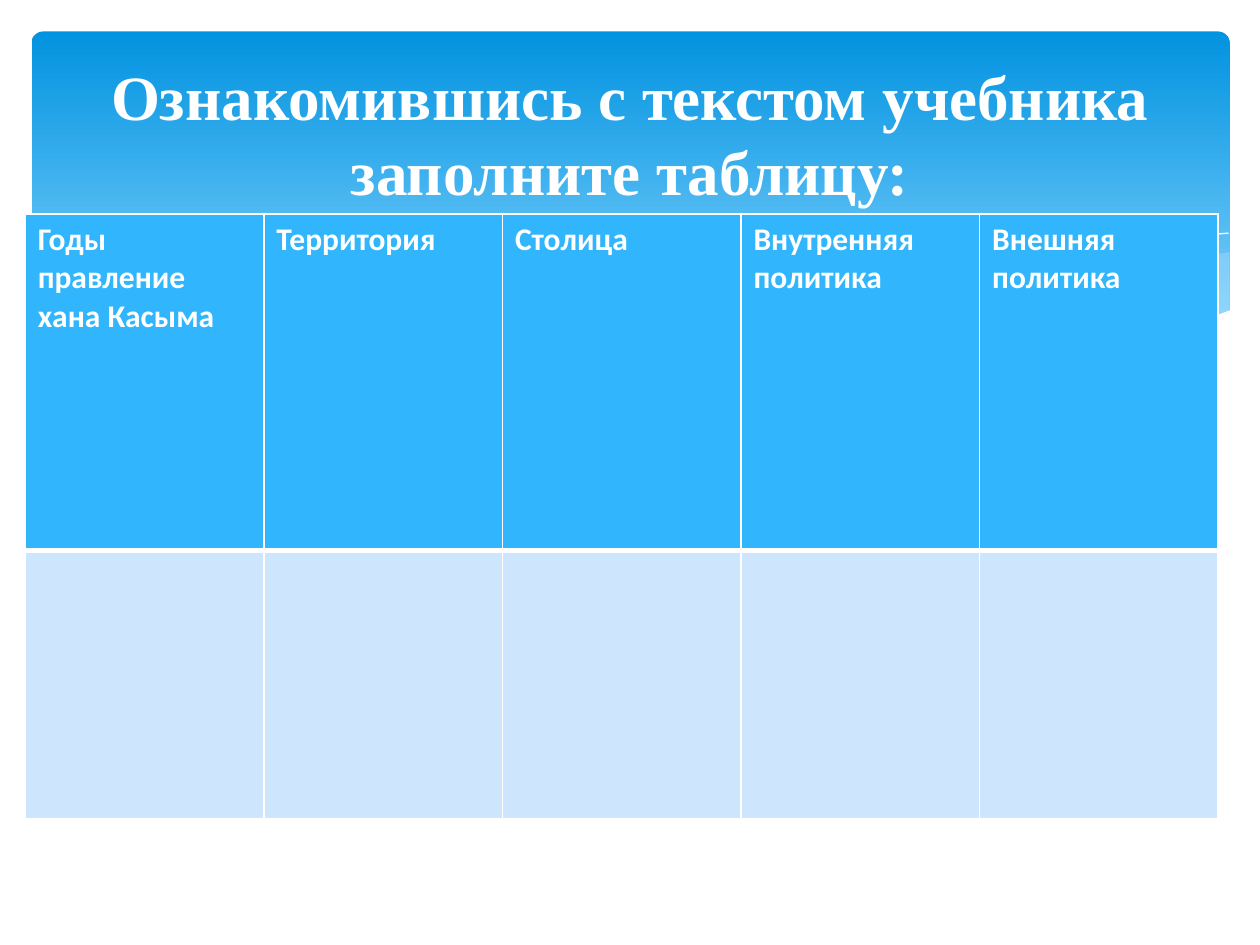
import pptx
import pptx.dml.color
import pptx.enum.shapes
import pptx.enum.text
import pptx.oxml
import pptx.oxml.ns
import pptx.util
from lxml import etree

Inches = pptx.util.Inches
Pt = pptx.util.Pt

COLORS = {
    "white": "FFFFFF",
    "panel_top": "0293E0",
    "panel_bottom": "83D3FE",
    "wave": "C6E7FC",
    "header": "31B6FD",
    "body": "CEE5FE",
}
TITLE = "Ознакомившись с текстом учебника заполните таблицу:"
HEADERS = ["Годы правление хана Касыма", "Территория", "Столица",
           "Внутренняя политика", "Внешняя политика"]
ROW_HEIGHTS = [2.67, 2.13]
TABLE_WIDTH = 9.47

RIGHT_WAVE = [
    (9.76, 2), (9.35, 2.07), (8.91, 2.16), (8.32, 2.3), (7.79, 2.42), (7.29, 2.53),
    (6.61, 2.65), (7.05, 2.71), (7.45, 2.75), (7.81, 2.77), (8.24, 2.77),
    (8.63, 2.75), (8.97, 2.7), (9.35, 2.62), (9.63, 2.52), (9.76, 2.47)]
MIDDLE_WAVE = [
    (8.93, 2.73), (8.37, 2.65), (7.75, 2.54), (7.06, 2.4), (6.29, 2.22),
    (5.69, 2.08), (5.14, 1.98), (4.65, 1.91), (4.2, 1.87), (3.8, 1.85),
    (3.28, 1.87), (2.86, 1.91), (3.42, 1.99), (4.04, 2.11), (4.91, 2.32),
    (5.66, 2.48), (6.34, 2.61), (6.95, 2.7), (7.48, 2.76), (8.07, 2.78), (8.57, 2.77)]
FALLING_LINE = [
    (3.09, 1.95), (3.44, 1.9), (4.01, 1.87), (4.5, 1.88), (5.1, 1.92), (5.82, 2),
    (6.65, 2.13), (7.27, 2.26), (7.95, 2.41), (8.69, 2.61), (9.07, 2.72)]
RISING_LINE = [
    (6.13, 2.57), (6.72, 2.41), (7.48, 2.23), (8.06, 2.1), (8.66, 1.99),
    (9.1, 1.92), (9.51, 1.87), (9.75, 1.85)]
WHITE_WAVE = [
    (9.77, 2.46), (9.5, 2.56), (9.2, 2.65), (8.87, 2.71), (8.5, 2.75), (8.09, 2.77),
    (7.61, 2.75), (7.08, 2.7), (6.48, 2.62), (5.79, 2.5), (5.03, 2.33), (4.18, 2.13),
    (3.4, 1.97), (2.71, 1.88), (2.11, 1.84), (1.61, 1.84), (1.19, 1.87),
    (0.76, 1.95), (0.46, 2.03), (0.23, 2.13), (0.23, 3.29), (9.77, 3.29)]


def color(name):
    return pptx.dml.color.RGBColor.from_string(COLORS[name])


def add_panel(slide):
    panel = slide.shapes.add_shape(
        pptx.enum.shapes.MSO_SHAPE.ROUNDED_RECTANGLE,
        Inches(0.25), Inches(0.25), Inches(9.51), Inches(2.7))
    panel.adjustments[0] = 0.034
    panel.shadow.inherit = False
    panel.line.fill.background()
    panel.fill.gradient()
    panel.fill.gradient_angle = 270
    stops = panel.fill.gradient_stops
    for stop, name, position in zip(stops, ("panel_top", "panel_bottom"), (0, 0.9)):
        stop.color.rgb = color(name)
        stop.position = position


def add_outline(slide, points, close):
    corners = [(Inches(x), Inches(y)) for x, y in points]
    builder = slide.shapes.build_freeform(*corners[0])
    builder.add_line_segments(corners[1:], close=close)
    shape = builder.convert_to_shape()
    shape.shadow.inherit = False
    return shape


def add_wave(slide, points, name, opacity=100):
    wave = add_outline(slide, points, True)
    wave.line.fill.background()
    wave.fill.solid()
    wave.fill.fore_color.rgb = color(name)
    if opacity < 100:
        fill_color = wave.element.spPr.find(".//" + pptx.oxml.ns.qn("a:srgbClr"))
        etree.SubElement(fill_color, pptx.oxml.ns.qn("a:alpha"), val=str(opacity * 1000))


def add_wave_line(slide, points):
    line = add_outline(slide, points, False)
    line.fill.background()
    line.line.color.rgb = color("white")
    line.line.width = Pt(0)


def set_borders(cell, **widths):
    """Draw white borders; widths are points keyed by side L, R, T, B."""
    properties = cell._tc.get_or_add_tcPr()
    for side in "LRTB":
        properties.append(pptx.oxml.parse_xml(
            f'<a:ln{side} {pptx.oxml.ns.nsdecls("a")} w="{Pt(widths.get(side, 1))}">'
            f'<a:solidFill><a:srgbClr val="{COLORS["white"]}"/></a:solidFill>'
            f'</a:ln{side}>'))


def format_text(paragraph, font_name, size):
    for run in paragraph.runs:
        run.font.name = font_name
        run.font.size = Pt(size)
        run.font.bold = True
        run.font.color.rgb = color("white")


def add_task_table(slide):
    table = slide.shapes.add_table(
        len(ROW_HEIGHTS), len(HEADERS), Inches(0.2), Inches(1.7),
        Inches(TABLE_WIDTH), Inches(sum(ROW_HEIGHTS))).table
    for row, height in zip(table.rows, ROW_HEIGHTS):
        row.height = Inches(height)
    for index, heading in enumerate(HEADERS):
        table.columns[index].width = Inches(TABLE_WIDTH / len(HEADERS))
        header, body = table.cell(0, index), table.cell(1, index)
        set_borders(header, B=3)
        set_borders(body, T=3)
        for cell, name in ((header, "header"), (body, "body")):
            cell.fill.solid()
            cell.fill.fore_color.rgb = color(name)
        header.text_frame.text = heading
        format_text(header.text_frame.paragraphs[0], "Calibri", 18)


def set_title(slide):
    title = slide.shapes.title
    title.left, title.top = Inches(0.5), Inches(0.37)
    title.width, title.height = Inches(9), Inches(1.37)
    frame = title.text_frame
    frame.text = TITLE
    frame.word_wrap = True
    frame.vertical_anchor = pptx.enum.text.MSO_ANCHOR.MIDDLE
    frame.paragraphs[0].alignment = pptx.enum.text.PP_ALIGN.CENTER
    format_text(frame.paragraphs[0], "Times New Roman", 36)
    # Bring the title in front of the panel and the table.
    title.element.getparent().append(title.element)


def main():
    presentation = pptx.Presentation()
    presentation.slide_width = Inches(10)
    presentation.slide_height = Inches(7.5)
    slide = presentation.slides.add_slide(presentation.slide_layouts[5])
    add_panel(slide)
    add_wave(slide, RIGHT_WAVE, "wave", 29)
    add_wave(slide, MIDDLE_WAVE, "wave", 40)
    add_wave_line(slide, FALLING_LINE)
    add_wave_line(slide, RISING_LINE)
    add_wave(slide, WHITE_WAVE, "white")
    add_task_table(slide)
    set_title(slide)
    presentation.save("out.pptx")


if __name__ == "__main__":
    main()
